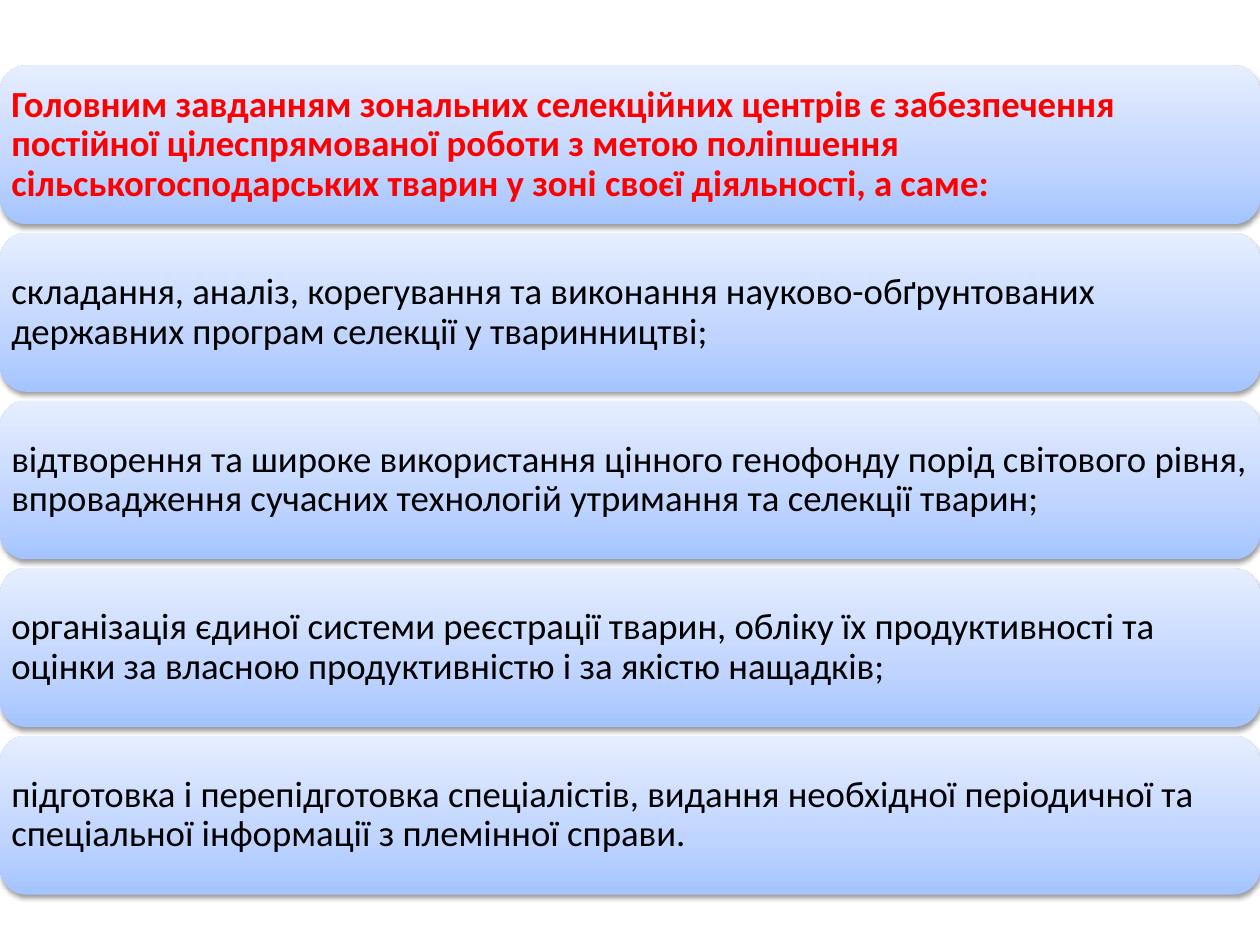
import copy

import pptx
import pptx.dml.color
import pptx.enum.shapes
import pptx.enum.text
import pptx.oxml
import pptx.oxml.ns
import pptx.util

Pt = pptx.util.Pt
RGB = pptx.dml.color.RGBColor
qn = pptx.oxml.ns.qn

RED = RGB(0xFF, 0x00, 0x00)
BLACK = RGB(0x00, 0x00, 0x00)
# Gradient from the bottom of a bar to its top
STOPS = [
    (0, RGB(0xA4, 0xC4, 0xFF)),
    (0.35, RGB(0xBF, 0xD4, 0xFF)),
    (1, RGB(0xE6, 0xEE, 0xFF)),
]
SHADOW = (
    f'<a:outerShdw {pptx.oxml.ns.nsdecls("a")} blurRad="{Pt(3.1)}" dist="{Pt(1.6)}" '
    'dir="5400000" rotWithShape="0">'
    '<a:srgbClr val="000000"><a:alpha val="38000"/></a:srgbClr></a:outerShdw>'
)

WIDTH, HEIGHT = 720, 540
TOP, BAR_HEIGHT, PITCH = 37.44, 90.72, 95.76

HEADING = (
    "Головним завданням зональних селекційних центрів є забезпечення постійної "
    "цілеспрямованої роботи з метою поліпшення сільськогосподарських тварин "
    "у зоні своєї діяльності, а саме:"
)
TASKS = [
    "складання, аналіз, корегування та виконання науково-обґрунтованих "
    "державних програм селекції у тваринництві;",
    "відтворення та широке використання цінного генофонду порід світового рівня, "
    "впровадження сучасних технологій утримання та селекції тварин;",
    "організація єдиної системи реєстрації тварин, обліку їх продуктивності та "
    "оцінки за власною продуктивністю і за якістю нащадків;",
    "підготовка і перепідготовка спеціалістів, видання необхідної періодичної та "
    "спеціальної інформації з племінної справи.",
]


def write(tf, text, *, font="Calibri", size=21, color=BLACK, bold=False):
    p = tf.paragraphs[0]
    p.alignment = pptx.enum.text.PP_ALIGN.LEFT
    p.line_spacing = 0.9
    r = p.add_run()
    r.text = text
    r.font.name = font
    r.font.size = Pt(size)
    r.font.bold = bold
    r.font.color.rgb = color


class Deck:
    def __init__(self):
        self.prs = pptx.Presentation()
        self.prs.slide_width, self.prs.slide_height = Pt(WIDTH), Pt(HEIGHT)
        self.s = self.prs.slides.add_slide(self.prs.slide_layouts[6])

    def bar(self, top, text, **fmt):
        sp = self.s.shapes.add_shape(
            pptx.enum.shapes.MSO_SHAPE.ROUNDED_RECTANGLE,
            0, Pt(top), Pt(WIDTH), Pt(BAR_HEIGHT),
        )
        sp.line.fill.background()
        self.gradient(sp)
        self.shadow(sp)

        tf = sp.text_frame
        tf.word_wrap = True
        tf.vertical_anchor = pptx.enum.text.MSO_ANCHOR.MIDDLE
        # The rounded corners already inset the text by about 4.4 pt
        tf.margin_left = tf.margin_right = Pt(2.05)
        tf.margin_top = tf.margin_bottom = Pt(2.05)
        write(tf, text, **fmt)

    def gradient(self, sp):
        sp.fill.gradient()
        sp.fill.gradient_angle = 90
        stops = sp._element.spPr.find(".//" + qn("a:gsLst"))
        stops.append(copy.deepcopy(stops[0]))
        for stop, (position, color) in zip(sp.fill.gradient_stops, STOPS):
            stop.position = position
            stop.color.rgb = color

    def shadow(self, sp):
        sp.shadow.inherit = False
        effects = sp._element.spPr.find(qn("a:effectLst"))
        effects.append(pptx.oxml.parse_xml(SHADOW))


def main():
    deck = Deck()
    # Heading bar
    deck.bar(TOP, HEADING, color=RED, bold=True)
    # Task bars
    for i, task in enumerate(TASKS, start=1):
        deck.bar(TOP + i * PITCH, task)
    deck.prs.save("out.pptx")


if __name__ == "__main__":
    main()
